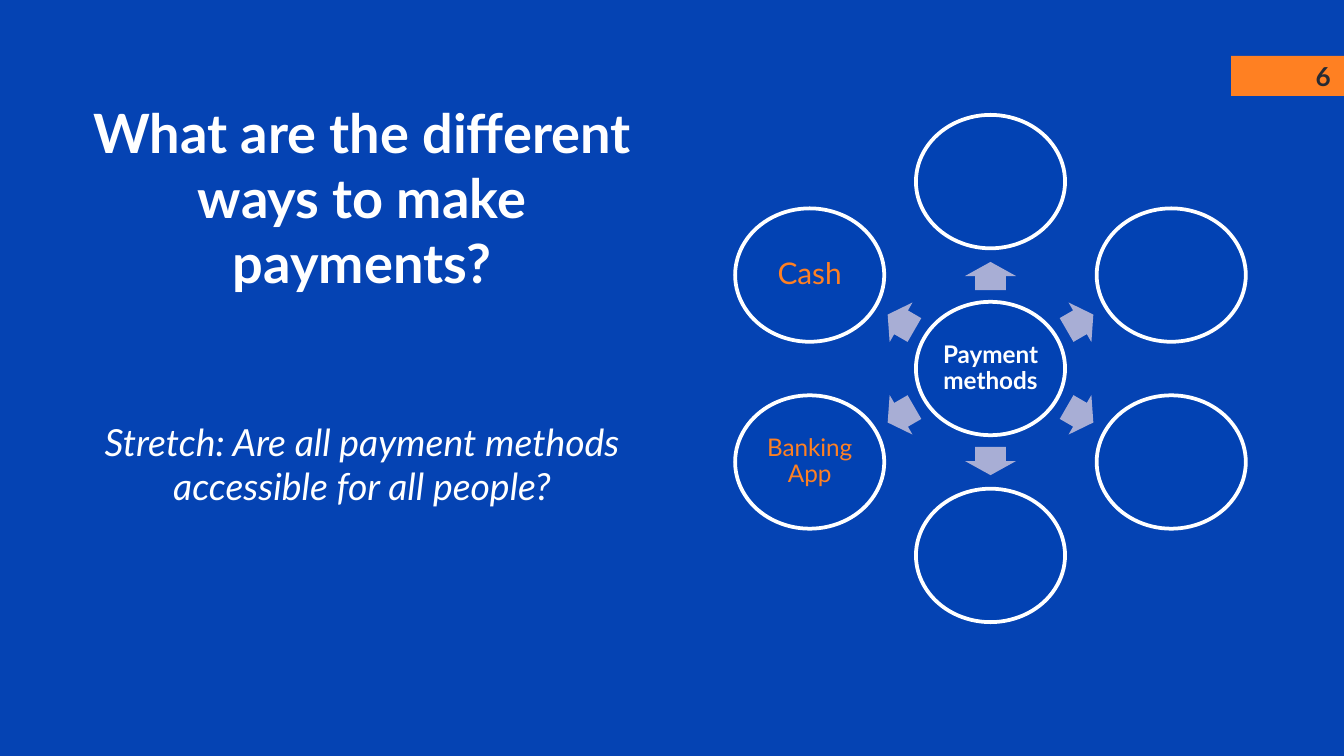
from collections import namedtuple
from math import cos, radians, sin

from pptx import Presentation
from pptx.dml.color import RGBColor
from pptx.enum.shapes import MSO_SHAPE
from pptx.enum.text import MSO_ANCHOR, MSO_AUTO_SIZE, PP_ALIGN
from pptx.util import Inches, Pt

BLUE = RGBColor(0x05, 0x43, 0xB3)
CIRCLE_BLUE = RGBColor(0x02, 0x42, 0xB3)
WHITE = RGBColor(0xFF, 0xFF, 0xFF)
ORANGE = RGBColor(0xFF, 0x80, 0x22)
LILAC = RGBColor(0xA8, 0xAE, 0xD5)
DARK = RGBColor(0x26, 0x2A, 0x33)
FONT = "Lato"
WIDTH = 10
HEIGHT = WIDTH * 9 / 16

Box = namedtuple("Box", "left top width height")


def share(left, top, width, height):
    """Box in inches from percentages of the slide's size."""
    return Box(left * WIDTH / 100, top * HEIGHT / 100,
               width * WIDTH / 100, height * HEIGHT / 100)


def centred(x, y, width, height):
    return Box(x - width / 2, y - height / 2, width, height)


def place(shape, box):
    shape.left, shape.top, shape.width, shape.height = map(Inches, box)


def write(shape, text, size, color, margins, align=PP_ALIGN.CENTER,
          anchor=MSO_ANCHOR.MIDDLE, spacing=1.0, bold=False, italic=False):
    frame = shape.text_frame
    frame.word_wrap = True
    frame.auto_size = MSO_AUTO_SIZE.NONE
    frame.vertical_anchor = anchor
    frame.margin_left = frame.margin_right = Inches(margins[0])
    frame.margin_top = frame.margin_bottom = Inches(margins[1])
    para = frame.paragraphs[0]
    para.alignment = align
    para.line_spacing = spacing
    para.space_before = Pt(0)
    span = para.add_run()
    span.text = text
    span.font.name, span.font.size = FONT, Pt(size)
    span.font.bold, span.font.italic = bold, italic
    span.font.color.rgb = color


def add_shape(page, kind, box, fill, outline=None):
    shape = page.shapes.add_shape(kind, *map(Inches, box))
    shape.shadow.inherit = False
    shape.fill.solid()
    shape.fill.fore_color.rgb = fill
    if outline is None:
        shape.line.fill.background()
    else:
        shape.line.color.rgb = outline
        shape.line.width = Pt(2)
    return shape


def add_page_number(page, box, number):
    add_shape(page, MSO_SHAPE.RECTANGLE, box, ORANGE)
    label = page.shapes.add_textbox(
        *map(Inches, (box.left + 0.38 * box.width,
                      box.top + 0.08 * box.height,
                      0.62 * box.width, 0.84 * box.height)))
    write(label, number, 14, DARK, (0.1, 0.1), PP_ALIGN.RIGHT, bold=True)


def add_question(page, box, question, stretch):
    title, body = page.placeholders
    place(title, box._replace(height=box.height * 0.5))
    write(title, question, 29, WHITE, (0.1, 0.05),
          anchor=MSO_ANCHOR.TOP, bold=True)
    place(body, Box(box.left, box.top + box.height * 0.755,
                    box.width, box.height * 0.245))
    write(body, stretch, 20, WHITE, (0.1, 0.05),
          anchor=MSO_ANCHOR.TOP, italic=True)


def add_radial_diagram(page, box, hub, spokes):
    """A hub with spokes given clockwise from the top as (text, size)."""
    x, y = box.left + box.width / 2, box.top + box.height / 2
    wide, high = box.width * 0.292, box.height * 0.263
    radius_x = (box.width - wide) / 2 / cos(radians(30))
    radius_y = (box.height - high) / 2

    def add_circle(centre_x, centre_y, text, size, color, bold=False):
        circle = add_shape(page, MSO_SHAPE.OVAL,
                           centred(centre_x, centre_y, wide, high),
                           CIRCLE_BLUE, WHITE)
        if text:
            write(circle, text, size, color, (0.02, 0.02),
                  spacing=0.9, bold=bold)

    add_circle(x, y, hub, 13, WHITE, bold=True)
    step = 360 / len(spokes)
    for index, (text, size) in enumerate(spokes):
        angle = index * step - 90
        across = radius_x * cos(radians(angle))
        down = radius_y * sin(radians(angle))
        # Arrows sit halfway out; the vertical ones are squatter
        length, breadth = (0.21, 0.38) if index % 3 == 0 else (0.23, 0.34)
        arrow = add_shape(
            page, MSO_SHAPE.RIGHT_ARROW,
            centred(x + across * 0.495, y + down * 0.495, length, breadth),
            LILAC)
        arrow.adjustments[0], arrow.adjustments[1] = 0.6, 0.5
        arrow.rotation = angle % 360
        add_circle(x + across, y + down, text, size, ORANGE)


def main():
    deck = Presentation()
    deck.slide_width, deck.slide_height = Inches(WIDTH), Inches(HEIGHT)
    page = deck.slides.add_slide(deck.slide_layouts[0])
    page.background.fill.solid()
    page.background.fill.fore_color.rgb = BLUE

    add_page_number(page, share(91.6, 7.4, 8.4, 5.3), "6")
    add_radial_diagram(
        page, share(54.7, 15.2, 38, 67.1), "Payment methods",
        [("", 13), ("", 13), ("", 13), ("", 13),
         ("Banking App", 13), ("Cash", 16)])
    add_question(page, share(4.5, 12.3, 44.9, 55.9),
                 "What are the different ways to make payments?",
                 "Stretch: Are all payment methods accessible for all people?")
    deck.save("out.pptx")


if __name__ == "__main__":
    main()
